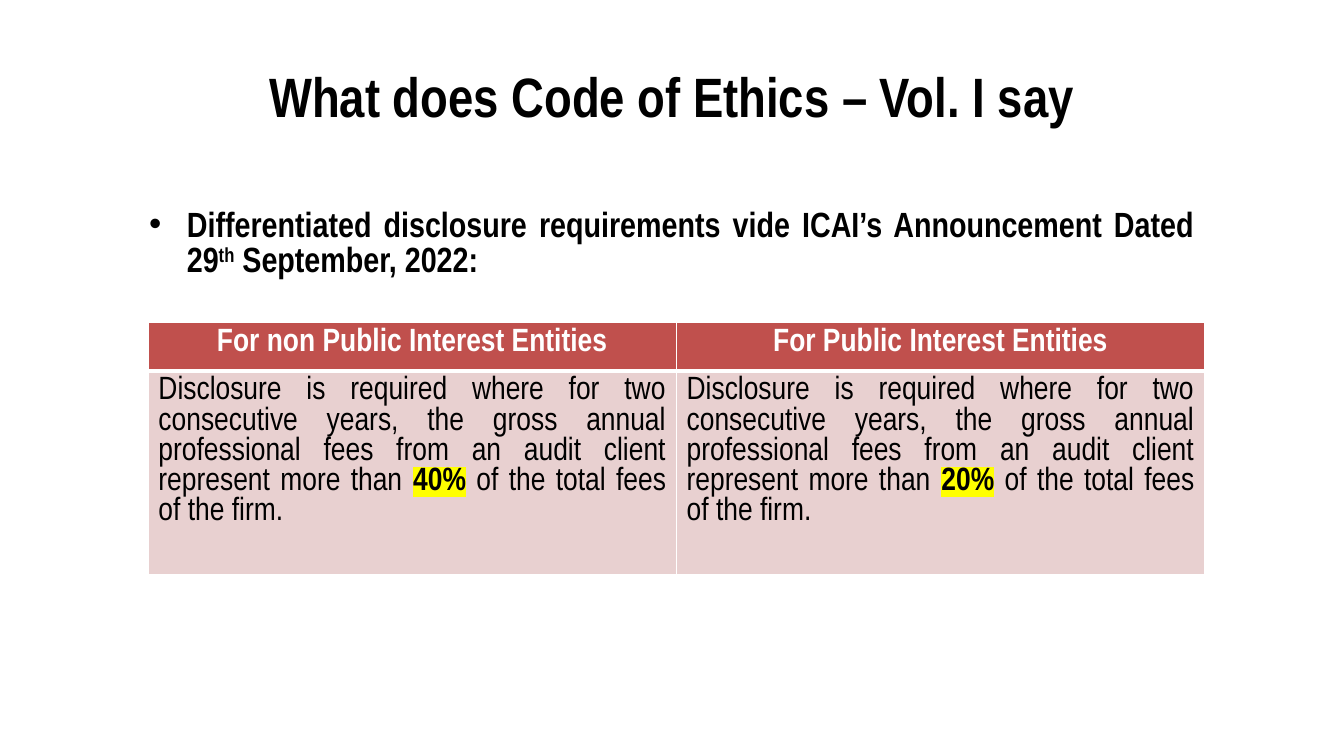
"""Build a slide on fee disclosure rules with a title, a bullet and a table."""
from pptx import Presentation
from pptx.dml.color import RGBColor
from pptx.enum.text import MSO_ANCHOR, PP_ALIGN
from pptx.oxml.ns import qn
from pptx.util import Pt
from lxml.etree import SubElement, Element

BLACK = RGBColor(0x00, 0x00, 0x00)
WHITE = RGBColor(0xFF, 0xFF, 0xFF)
RED = RGBColor(0xC0, 0x50, 0x4D)
PINK = RGBColor(0xE8, 0xD0, 0xD0)
YELLOW = RGBColor(0xFF, 0xFF, 0x00)


def add_run(p, text, size=23, color=BLACK, bold=False, baseline=None, highlight=None):
    r = p.add_run()
    r.text = text
    r.font.size = Pt(size)
    r.font.bold = bold
    r.font.color.rgb = color
    r.font.name = "Arial Narrow"
    rPr = r.font._element
    if baseline:
        rPr.set("baseline", str(baseline))
    if highlight:
        hl = Element(qn("a:highlight"))
        SubElement(hl, qn("a:srgbClr")).set("val", str(highlight))
        rPr.find(qn("a:solidFill")).addnext(hl)


def set_borders(cell, bottom):
    tcPr = cell._tc.get_or_add_tcPr()
    for i, (side, width) in enumerate((("L", 1), ("R", 1), ("T", 1), ("B", bottom))):
        ln = Element(qn(f"a:ln{side}"), w=str(Pt(width)))
        fill = SubElement(ln, qn("a:solidFill"))
        SubElement(fill, qn("a:srgbClr")).set("val", str(WHITE))
        tcPr.insert(i, ln)


prs = Presentation()
prs.slide_width, prs.slide_height = Pt(960), Pt(540)
s = prs.slides.add_slide(prs.slide_layouts[6])

title = s.shapes.add_textbox(Pt(156), Pt(43.2), Pt(648), Pt(50.4))
tf = title.text_frame
tf.word_wrap = True
tf.vertical_anchor = MSO_ANCHOR.MIDDLE
p = tf.paragraphs[0]
p.alignment = PP_ALIGN.CENTER
add_run(p, "What does Code of Ethics – Vol. I say", size=39.6, bold=True)

body = s.shapes.add_textbox(Pt(99.4), Pt(146.2), Pt(760.3), Pt(285))
tf = body.text_frame
tf.word_wrap = True
p = tf.paragraphs[0]
p.alignment = PP_ALIGN.JUSTIFY
p.line_spacing = Pt(25)
pPr = p._p.get_or_add_pPr()
pPr.set("marL", str(Pt(27)))
pPr.set("indent", str(Pt(-27)))
SubElement(pPr, qn("a:buFont")).set("typeface", "Arial")
SubElement(pPr, qn("a:buChar")).set("char", "•")
add_run(p, "Differentiated disclosure requirements vide ICAI’s Announcement Dated 29", size=25, bold=True)
add_run(p, "th", size=25, bold=True, baseline=30000)
add_run(p, " September, 2022:", size=25, bold=True)

table = s.shapes.add_table(2, 2, Pt(106), Pt(230.4), Pt(754.6), Pt(144)).table
table.rows[0].height = Pt(28.6)
table.rows[1].height = Pt(115.4)
columns = [("For non Public Interest Entities", "40%"), ("For Public Interest Entities", "20%")]
for col, (heading, limit) in enumerate(columns):
    table.columns[col].width = Pt(377.3)
    head, rule = table.cell(0, col), table.cell(1, col)
    for cell, color, bottom in ((head, RED, 3), (rule, PINK, 1)):
        cell.fill.solid()
        cell.fill.fore_color.rgb = color
        set_borders(cell, bottom)
    p = head.text_frame.paragraphs[0]
    p.alignment = PP_ALIGN.CENTER
    add_run(p, heading, color=WHITE, bold=True)
    p = rule.text_frame.paragraphs[0]
    p.alignment = PP_ALIGN.JUSTIFY
    add_run(p, "Disclosure is required where for two consecutive years, the gross annual "
               "professional fees from an audit client represent more than ")
    add_run(p, limit, bold=True, highlight=YELLOW)
    add_run(p, " of the total fees of the firm.")

prs.save("out.pptx")
